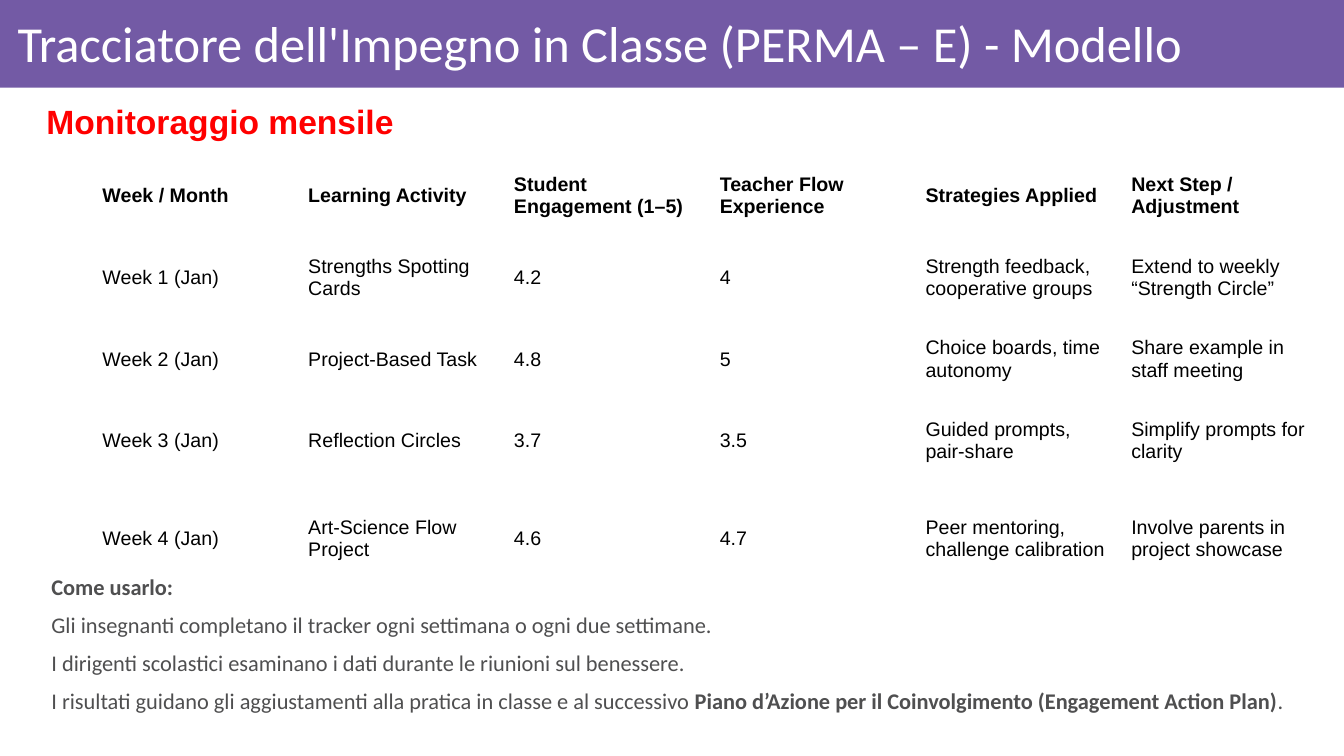
import dataclasses

import lxml.etree
import pptx
import pptx.dml.color
import pptx.enum.shapes
import pptx.enum.text
import pptx.oxml.ns
import pptx.util

Pt = pptx.util.Pt
MIDDLE = pptx.enum.text.MSO_ANCHOR.MIDDLE
LEFT = pptx.enum.text.PP_ALIGN.LEFT
JUSTIFY = pptx.enum.text.PP_ALIGN.JUSTIFY


@dataclasses.dataclass(frozen=True)
class Theme:
    purple: str = "735AA5"
    white: str = "FFFFFF"
    red: str = "FF0000"
    black: str = "000000"
    grey: str = "4F4F50"
    heading_font: str = "Calibri"
    table_font: str = "Arial"
    title_size: float = 36
    subtitle_size: float = 24
    table_size: float = 14
    note_size: float = 16


THEME = Theme()

HEADERS = ["Week / Month", "Learning Activity", "Student Engagement (1–5)",
           "Teacher Flow Experience", "Strategies Applied", "Next Step / Adjustment"]
WEEKS = [
    ["Week 1 (Jan)", "Strengths Spotting Cards", "4.2", "4",
     "Strength feedback, cooperative groups", "Extend to weekly “Strength Circle”"],
    ["Week 2 (Jan)", "Project-Based Task", "4.8", "5",
     "Choice boards, time autonomy", "Share example in staff meeting"],
    ["Week 3 (Jan)", "Reflection Circles", "3.7", "3.5",
     "Guided prompts, pair-share", "Simplify prompts for clarity"],
    ["Week 4 (Jan)", "Art-Science Flow Project", "4.6", "4.7",
     "Peer mentoring, challenge calibration", "Involve parents in project showcase"],
]
NOTES = [
    [("Come usarlo:", True)],
    [("Gli insegnanti completano il tracker ogni settimana o ogni due settimane.", False)],
    [("I dirigenti scolastici esaminano i dati durante le riunioni sul benessere.", False)],
    [("I risultati guidano gli aggiustamenti alla pratica in classe e al successivo ", False),
     ("Piano d’Azione per il Coinvolgimento (Engagement Action Plan)", True),
     (".", False)],
]


def write(paragraph, runs, *, font, size, color, align=LEFT, line_spacing=1.0,
          space_before=0, hanging=False):
    if hanging:
        properties = paragraph._p.get_or_add_pPr()
        properties.set("marL", str(Pt(36)))
        properties.set("indent", str(Pt(-18)))
        lxml.etree.SubElement(properties, pptx.oxml.ns.qn("a:buNone"))
    paragraph.alignment = align
    paragraph.line_spacing = line_spacing
    paragraph.space_before = Pt(space_before)
    for text, bold in runs:
        run = paragraph.add_run()
        run.text = text
        run.font.name = font
        run.font.size = Pt(size)
        run.font.bold = bold
        run.font.color.rgb = pptx.dml.color.RGBColor.from_string(color)


def place(placeholder, box, inset_x=7.2, inset_y=3.6, inset_bottom=None):
    left, top, width, height = map(Pt, box)
    placeholder.left, placeholder.top = left, top
    placeholder.width, placeholder.height = width, height
    frame = placeholder.text_frame
    frame.word_wrap = True
    frame.auto_size = pptx.enum.text.MSO_AUTO_SIZE.NONE
    frame.vertical_anchor = MIDDLE
    frame.margin_left = frame.margin_right = Pt(inset_x)
    frame.margin_top = Pt(inset_y)
    frame.margin_bottom = Pt(inset_y if inset_bottom is None else inset_bottom)
    return frame


def title_band(slide, box):
    left, top, width, height = box
    band = slide.shapes.add_shape(pptx.enum.shapes.MSO_SHAPE.RECTANGLE, *map(Pt, box))
    band.shadow.inherit = False
    band.fill.solid()
    band.fill.fore_color.rgb = pptx.dml.color.RGBColor.from_string(THEME.purple)
    band.line.fill.background()
    title = slide.shapes.title
    title.element.addprevious(band.element)
    frame = place(title, (left + 8, top + 6.5, width - 20, height - 6.5), 4.5, 4.5, 8)
    write(frame.paragraphs[0], [("Tracciatore dell'Impegno in Classe (PERMA – E) - Modello", False)],
          font=THEME.heading_font, size=THEME.title_size, color=THEME.white, line_spacing=0.9)


def subtitle(placeholder, box):
    frame = place(placeholder, box)
    write(frame.paragraphs[0], [("Monitoraggio mensile", True)], font=THEME.table_font,
          size=THEME.subtitle_size, color=THEME.red, align=JUSTIFY,
          line_spacing=0.9, hanging=True)


def tracker_table(slide, box, last_row_height):
    rows = [HEADERS] + WEEKS
    frame = slide.shapes.add_table(len(rows), len(HEADERS), *map(Pt, box))
    table = frame.table
    table.first_row = False
    table.horz_banding = False
    for column in table.columns:
        column.width = Pt(box[2] / len(HEADERS))
    for row in table.rows:
        row.height = Pt((box[3] - last_row_height) / (len(rows) - 1))
    table.rows[len(rows) - 1].height = Pt(last_row_height)
    for row_index, values in enumerate(rows):
        for column_index, value in enumerate(values):
            cell = table.cell(row_index, column_index)
            cell.fill.background()
            cell.vertical_anchor = MIDDLE
            write(cell.text_frame.paragraphs[0], [(value, row_index == 0)],
                  font=THEME.table_font, size=THEME.table_size, color=THEME.black)


def usage_notes(placeholder, box):
    frame = place(placeholder, box, inset_bottom=25)
    for index, runs in enumerate(NOTES):
        paragraph = frame.add_paragraph() if index else frame.paragraphs[0]
        write(paragraph, runs, font=THEME.heading_font, size=THEME.note_size,
              color=THEME.grey, line_spacing=0.9, space_before=10 if index else 0,
              hanging=True)


def main():
    presentation = pptx.Presentation()
    presentation.slide_width, presentation.slide_height = Pt(960), Pt(540)
    slide = presentation.slides.add_slide(presentation.slide_layouts[3])
    title_band(slide, (0, 0, 960, 62.6))
    subtitle(slide.placeholders[1], (8, 67, 940, 43))
    tracker_table(slide, (66, 111, 882, 315), last_row_height=82)
    usage_notes(slide.placeholders[2], (11.5, 403.2, 948.5, 136.8))
    presentation.save("out.pptx")


if __name__ == "__main__":
    main()
